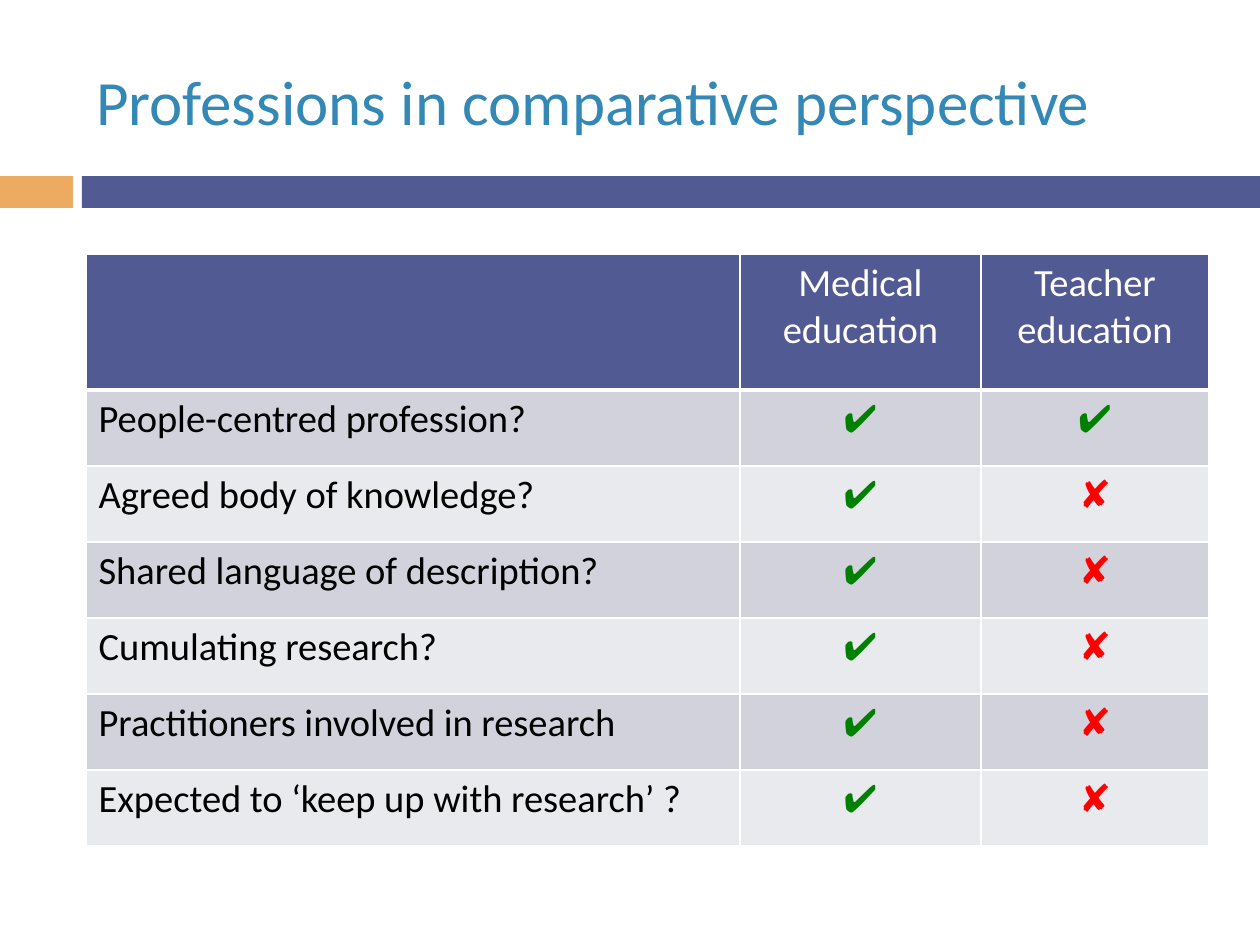
"""Build a slide comparing medical and teacher education as professions."""
from dataclasses import dataclass

from lxml import etree
from pptx import Presentation
from pptx import util as u
from pptx.dml import color
from pptx.enum import shapes, text
from pptx.oxml import ns

TITLE = "Professions in comparative perspective"
HEADER = ("", "Medical education", "Teacher education")
QUESTIONS = [
    ("People-centred profession?", "✔", "✔"),
    ("Agreed body of knowledge?", "✔", "✘"),
    ("Shared language of description?", "✔", "✘"),
    ("Cumulating research?", "✔", "✘"),
    ("Practitioners involved in research", "✔", "✘"),
    ("Expected to ‘keep up with research’ ?", "✔", "✘"),
]

PX_PER_INCH = 126
SLIDE_SIZE = (1260, 945)
TITLE_BOX = (84, 32, 1124, 136)
BAR_TOP, BAR_HEIGHT = 176, 32
ACCENT_WIDTH, BAR_LEFT = 73, 82
TABLE_LEFT, TABLE_TOP = 86, 254
COLUMN_WIDTHS = (654, 241, 228)
HEADER_HEIGHT, ROW_HEIGHT = 136, 76


@dataclass(frozen=True)
class Theme:
    font: str = "Calibri"
    title_size: int = 36
    table_size: int = 22
    title: str = "3488B6"
    accent: str = "EDAA61"
    primary: str = "525A93"
    bands: tuple = ("D1D2DC", "E9EAEE")
    light: str = "FFFFFF"
    dark: str = "000000"
    yes: str = "008000"
    no: str = "FF0000"
    rule: int = 1
    header_rule: int = 3


THEME = Theme()
MARK_COLORS = {"✔": THEME.yes, "✘": THEME.no}


def px(length):
    return u.Inches(length / PX_PER_INCH)


def rgb(value):
    return color.RGBColor.from_string(value)


def write(frame, content, *, size, ink, align=text.PP_ALIGN.LEFT):
    para = frame.paragraphs[0]
    para.alignment = align
    span = para.add_run()
    span.text = content
    span.font.name = THEME.font
    span.font.size = u.Pt(size)
    span.font.bold = False
    span.font.color.rgb = rgb(ink)


def add_bar(page, left, right, fill):
    bar = page.shapes.add_shape(
        shapes.MSO_SHAPE.RECTANGLE,
        px(left), px(BAR_TOP), px(right - left), px(BAR_HEIGHT),
    )
    bar.shadow.inherit = False
    bar.fill.solid()
    bar.fill.fore_color.rgb = rgb(fill)
    bar.line.fill.background()


def set_borders(cell, bottom):
    properties = cell._tc.get_or_add_tcPr()
    widths = {"lnL": THEME.rule, "lnR": THEME.rule, "lnT": THEME.rule, "lnB": bottom}
    for side, width in widths.items():
        line = etree.SubElement(properties, ns.qn(f"a:{side}"), w=str(u.Pt(width)))
        fill = etree.SubElement(line, ns.qn("a:solidFill"))
        etree.SubElement(fill, ns.qn("a:srgbClr"), val=THEME.light)


def add_comparison(page):
    rows = [HEADER, *QUESTIONS]
    heights = [HEADER_HEIGHT] + [ROW_HEIGHT] * len(QUESTIONS)
    table = page.shapes.add_table(
        len(rows), len(HEADER), px(TABLE_LEFT), px(TABLE_TOP),
        px(sum(COLUMN_WIDTHS)), px(sum(heights)),
    ).table
    for column, width in zip(table.columns, COLUMN_WIDTHS):
        column.width = px(width)
    for index, (values, height) in enumerate(zip(rows, heights)):
        table.rows[index].height = px(height)
        is_header = index == 0
        fill = THEME.primary if is_header else THEME.bands[(index - 1) % 2]
        for position, value in enumerate(values):
            cell = table.cell(index, position)
            set_borders(cell, THEME.header_rule if is_header else THEME.rule)
            cell.fill.solid()
            cell.fill.fore_color.rgb = rgb(fill)
            if value:
                ink = THEME.light if is_header else MARK_COLORS.get(value, THEME.dark)
                align = text.PP_ALIGN.CENTER if position else text.PP_ALIGN.LEFT
                write(cell.text_frame, value, size=THEME.table_size, ink=ink, align=align)


def main():
    deck = Presentation()
    deck.slide_width, deck.slide_height = map(px, SLIDE_SIZE)
    page = deck.slides.add_slide(deck.slide_layouts[6])
    add_bar(page, 0, ACCENT_WIDTH, THEME.accent)
    add_bar(page, BAR_LEFT, SLIDE_SIZE[0], THEME.primary)
    box = page.shapes.add_textbox(*map(px, TITLE_BOX))
    box.text_frame.word_wrap = True
    box.text_frame.vertical_anchor = text.MSO_ANCHOR.MIDDLE
    write(box.text_frame, TITLE, size=THEME.title_size, ink=THEME.title)
    add_comparison(page)
    deck.save("out.pptx")


if __name__ == "__main__":
    main()
